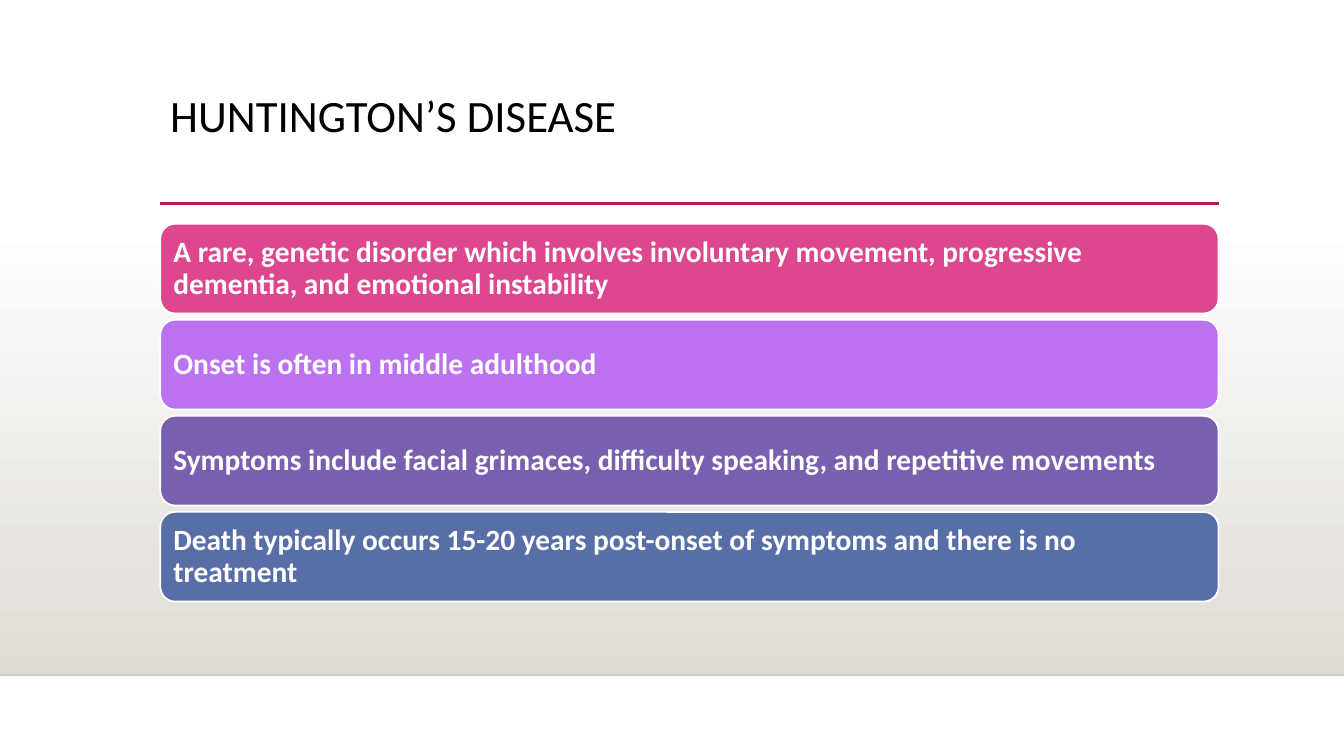
from lxml import etree
from pptx import Presentation
from pptx import util as u
from pptx.dml.color import RGBColor
from pptx.enum import shapes, text
from pptx.oxml.ns import qn

COLORS = {
    "white": "FFFFFF", "black": "000000", "floor": "DFDBD5", "rule": "B71E42",
    "pink": "DE478E", "violet": "BC72F0", "purple": "795FAF", "blue": "586EA6",
}
SLIDE_WIDTH, SLIDE_HEIGHT = u.Cm(33.87), u.Cm(19.05)
LEFT, WIDTH = u.Cm(4.04), u.Cm(26.67)
FLOOR_TOP, FLOOR_BOTTOM = u.Cm(5.61), u.Cm(17.02)
CARD_TOP, CARD_HEIGHT, CARD_PITCH = u.Cm(5.64), u.Cm(2.26), u.Cm(2.42)

FACTS = [
    ("pink", "A rare, genetic disorder which involves involuntary movement, "
             "progressive dementia, and emotional instability"),
    ("violet", "Onset is often in middle adulthood"),
    ("purple", "Symptoms include facial grimaces, difficulty speaking, and repetitive movements"),
    ("blue", "Death typically occurs 15-20 years post-onset of symptoms and there is no treatment"),
]


def rgb(name):
    return RGBColor.from_string(COLORS[name])


def set_all(target, values):
    for name, value in values.items():
        setattr(target, name, value)


def write(shape, content, color, inset, anchor, font):
    frame = shape.text_frame
    set_all(frame, {
        "word_wrap": True, "vertical_anchor": anchor,
        "margin_left": inset, "margin_right": inset,
    })
    paragraph = frame.paragraphs[0]
    set_all(paragraph, {"text": content, "line_spacing": 0.9, "alignment": text.PP_ALIGN.LEFT})
    set_all(paragraph.font, {"name": "Calibri", **font})
    paragraph.font.color.rgb = rgb(color)


def add_backdrop(slide):
    """Gradient that darkens from white down to the floor line."""
    shape = slide.shapes.add_shape(
        shapes.MSO_SHAPE.RECTANGLE, 0, FLOOR_TOP, SLIDE_WIDTH, FLOOR_BOTTOM - FLOOR_TOP)
    shape.shadow.inherit = False
    shape.line.fill.background()
    shape.fill.gradient()
    shape.fill.gradient_angle = 270
    for stop, color, position in zip(shape.fill.gradient_stops, ("white", "floor"), (0, 1)):
        stop.color.rgb = rgb(color)
        stop.position = position


def add_rule(slide, left, right, top, color, weight, opacity=100):
    line = slide.shapes.add_connector(shapes.MSO_CONNECTOR.STRAIGHT, left, top, right, top)
    line.line.color.rgb = rgb(color)
    line.line.width = u.Pt(weight)
    properties = line._element.spPr
    if opacity < 100:
        alpha = etree.SubElement(next(properties.iter(qn("a:srgbClr"))), qn("a:alpha"))
        alpha.set("val", str(opacity * 1000))
    etree.SubElement(properties, qn("a:effectLst"))


def add_title(slide, content):
    box = slide.shapes.add_textbox(LEFT, u.Cm(2.24), WIDTH, u.Cm(2.92))
    write(box, content, "black", u.Cm(0.25), text.MSO_ANCHOR.TOP, {"size": u.Pt(32)})


def add_card(slide, top, color, content):
    card = slide.shapes.add_shape(
        shapes.MSO_SHAPE.ROUNDED_RECTANGLE, LEFT, top, WIDTH, CARD_HEIGHT)
    card.shadow.inherit = False
    card.fill.solid()
    card.fill.fore_color.rgb = rgb(color)
    card.line.color.rgb = rgb("white")
    card.line.width = u.Pt(1.25)
    write(card, content, "white", u.Cm(0.22), text.MSO_ANCHOR.MIDDLE,
          {"size": u.Pt(21), "bold": True})


def main():
    presentation = Presentation()
    set_all(presentation, {"slide_width": SLIDE_WIDTH, "slide_height": SLIDE_HEIGHT})
    slide = presentation.slides.add_slide(presentation.slide_layouts[6])
    add_backdrop(slide)
    add_rule(slide, 0, SLIDE_WIDTH, FLOOR_BOTTOM, "black", 1, opacity=20)
    add_rule(slide, LEFT, u.Cm(30.73), u.Cm(5.13), "rule", 2.5)
    add_title(slide, "HUNTINGTON’S DISEASE")
    for index, (color, content) in enumerate(FACTS):
        add_card(slide, CARD_TOP + index * CARD_PITCH, color, content)
    presentation.save("out.pptx")


if __name__ == "__main__":
    main()
